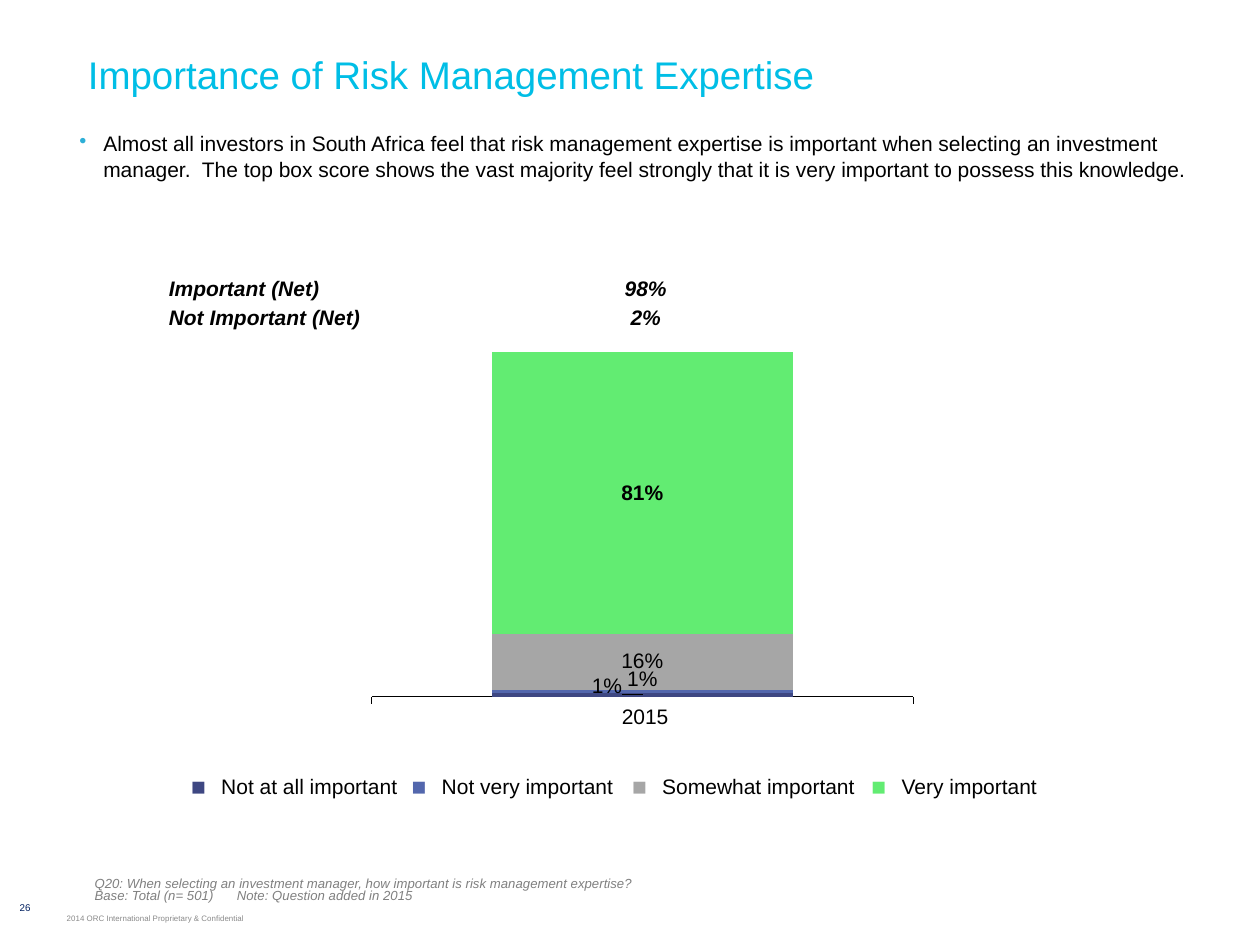
from lxml import etree
from pptx import Presentation
from pptx.chart.data import CategoryChartData
from pptx.dml.color import RGBColor
from pptx.enum.chart import XL_CHART_TYPE, XL_LABEL_POSITION, XL_TICK_LABEL_POSITION, XL_TICK_MARK
from pptx.enum.text import MSO_ANCHOR, PP_ALIGN
from pptx.oxml import parse_xml
from pptx.oxml.ns import qn
from pptx.util import Inches, Pt

STACKED = XL_CHART_TYPE.COLUMN_STACKED_100
LABEL_CENTER = XL_LABEL_POSITION.CENTER
NO_LABELS = XL_TICK_LABEL_POSITION.NONE
TICK_OUT, TICK_NONE = XL_TICK_MARK.OUTSIDE, XL_TICK_MARK.NONE
TOP, MIDDLE, BOTTOM = MSO_ANCHOR.TOP, MSO_ANCHOR.MIDDLE, MSO_ANCHOR.BOTTOM
LEFT, CENTER = PP_ALIGN.LEFT, PP_ALIGN.CENTER

BLACK = RGBColor(0, 0, 0)
CYAN = RGBColor(0x00, 0xBE, 0xE6)
NAVY = RGBColor(0x00, 0x20, 0x60)
GRAY = RGBColor(0x80, 0x80, 0x80)
FOOTER_GRAY = RGBColor(0x89, 0x89, 0x89)
FONT = "Arial"
PLAIN_TABLE = "{2D5ABB26-0587-4C30-8999-92F81FD0307C}"
A_NS = "http://schemas.openxmlformats.org/drawingml/2006/main"
C_NS = "http://schemas.openxmlformats.org/drawingml/2006/chart"

RATINGS = [
    ("Not at all important", 0.01, RGBColor(0x3E, 0x47, 0x82), 1.5),
    ("Not very important", 0.01, RGBColor(0x53, 0x67, 0xAD), 1.5),
    ("Somewhat important", 0.16, RGBColor(0xA6, 0xA6, 0xA6), 1.65),
    ("Very important", 0.81, RGBColor(0x62, 0xEC, 0x72), 1.3),
]
LABEL_SHIFTS = {0: (-0.06, -0.02), 1: (0, -0.03)}
PLOT_AREA = {"x": 0.077, "y": 0.072, "w": 0.92, "h": 0.836}


def style_font(font, size, color, bold=False, italic=False):
    font.name, font.size = FONT, Pt(size)
    font.bold, font.italic = bold, italic
    font.color.rgb = color


def add_run(p, text, *style):
    r = p.add_run()
    r.text = text
    style_font(r.font, *style)


def add_text(s, box, lines, style, anchor=MIDDLE, align=LEFT, insets=(0.1, 0.05, 0.1, 0.05)):
    tf = s.shapes.add_textbox(*map(Inches, box)).text_frame
    tf.word_wrap = True
    tf.vertical_anchor = anchor
    tf.margin_left, tf.margin_top, tf.margin_right, tf.margin_bottom = map(Inches, insets)
    for i, line in enumerate(lines):
        p = tf.paragraphs[0] if i == 0 else tf.add_paragraph()
        p.alignment = align
        add_run(p, line, *style)
    return tf


def add_bullet(p, char, color, indent):
    pPr = p._p.get_or_add_pPr()
    pPr.set("marL", str(Inches(indent)))
    pPr.set("indent", str(-Inches(indent)))
    pPr.append(parse_xml(f'<a:buClr xmlns:a="{A_NS}"><a:srgbClr val="{color}"/></a:buClr>'))
    pPr.append(parse_xml(f'<a:buChar xmlns:a="{A_NS}" char="{char}"/>'))


def add_tab(p, inches):
    tabs = etree.SubElement(p._p.get_or_add_pPr(), qn("a:tabLst"))
    etree.SubElement(tabs, qn("a:tab"), pos=str(Inches(inches)), algn="l")


def add_table(s, left, top, widths, row_height, rows):
    frame = s.shapes.add_table(len(rows), len(widths), Inches(left), Inches(top),
                               Inches(sum(widths)), Inches(row_height * len(rows)))
    table = frame.table
    table.first_row = table.horz_banding = False
    table._tbl.tblPr.find(qn("a:tableStyleId")).text = PLAIN_TABLE
    for column, width in zip(table.columns, widths):
        column.width = Inches(width)
    for i, row in enumerate(rows):
        table.rows[i].height = Inches(row_height)
        for j, (text, align, style) in enumerate(row):
            cell = table.cell(i, j)
            cell.fill.background()
            cell.vertical_anchor = MIDDLE
            cell.margin_left = cell.margin_right = Inches(0.01)
            cell.margin_top = cell.margin_bottom = Inches(0.01)
            p = cell.text_frame.paragraphs[0]
            p.alignment = align
            add_run(p, text, *style)


def manual_layout(values, inner=False):
    parts = '<c:layoutTarget val="inner"/>' if inner else ""
    if inner:
        parts += '<c:xMode val="edge"/><c:yMode val="edge"/>'
    parts += "".join(f'<c:{key} val="{value}"/>' for key, value in values.items())
    return parse_xml(f'<c:layout xmlns:c="{C_NS}"><c:manualLayout>{parts}</c:manualLayout></c:layout>')


def format_series(series, index, color):
    series.format.fill.solid()
    series.format.fill.fore_color.rgb = color
    labels = series.data_labels
    labels.show_value = True
    labels.number_format, labels.number_format_is_linked = "0%", False
    style_font(labels.font, 12, BLACK, index == len(RATINGS) - 1)
    if index in LABEL_SHIFTS:
        label = series.points[0].data_label
        style_font(label.font, 12, BLACK)
        label.position = LABEL_CENTER
        x, y = LABEL_SHIFTS[index]
        idx = series._element.find(".//" + qn("c:dLbl")).find(qn("c:idx"))
        idx.addnext(manual_layout({"x": x, "y": y}))


def add_rating_chart(s, box):
    data = CategoryChartData(number_format="0%")
    data.categories = ["1"]
    for i, (_, value, _, _) in enumerate(RATINGS, 1):
        data.add_series(f"Series {i}", [value])
    chart = s.shapes.add_chart(STACKED, *map(Inches, box), data).chart
    chart.has_legend = chart.has_title = False
    style_font(chart.font, 12, BLACK)
    axis = chart.category_axis
    axis.tick_label_position = NO_LABELS
    axis.major_tick_mark, axis.minor_tick_mark = TICK_OUT, TICK_NONE
    axis.format.line.color.rgb = BLACK
    axis.format.line.width = Pt(0.25)
    values = chart.value_axis
    values.minimum_scale, values.maximum_scale, values.major_unit = 0, 1, 0.25
    values.has_major_gridlines = values.visible = False
    plot = chart.plots[0]
    plot.gap_width, plot.overlap, plot.vary_by_categories = 80, 100, False
    for i, (series, rating) in enumerate(zip(plot.series, RATINGS)):
        format_series(series, i, rating[2])
    area = chart._chartSpace.find(".//" + qn("c:plotArea"))
    for old in area.findall(qn("c:layout")):
        area.remove(old)
    area.insert(0, manual_layout(PLOT_AREA, inner=True))


def add_tables(s):
    body, net = (12, BLACK), (12, BLACK, True, True)
    legend, widths = [], []
    for name, _, color, width in RATINGS:
        legend += [("■", CENTER, (14, color)), (f" {name}", LEFT, body)]
        widths += [0.25, width]
    add_table(s, 1.45, 6.12, widths, 0.25, [legend])
    nets = [("Important (Net)", "98%"), ("Not Important (Net)", "2%")]
    add_table(s, 1.33, 2.18, [2.57, 2.45], 0.23,
              [[(name, LEFT, net), (value, CENTER, net)] for name, value in nets])
    add_table(s, 3.12, 5.54, [4], 0.3, [[("2015", CENTER, body)]])


def main():
    prs = Presentation()
    prs.slide_width, prs.slide_height = Inches(10), Inches(7.5)
    s = prs.slides.add_slide(prs.slide_layouts[6])
    footer_insets = (0, 0.03, 0, 0.03)
    add_text(s, (0, 7, 0.4, 0.4), ["26"], (5.6, NAVY), align=CENTER, insets=footer_insets)
    add_text(s, (0.53, 7.19, 2.57, 0.2), ["2014 ORC International Proprietary & Confidential"],
             (4.5, FOOTER_GRAY), insets=footer_insets)
    add_text(s, (0.6, 0.25, 9, 0.67), ["Importance of Risk Management Expertise"], (22, CYAN))
    note = add_text(s, (0.74, 6.79, 7.79, 0.43), [
        "Q20: When selecting an investment manager, how important is risk management expertise?",
        "Base: Total (n= 501) \tNote: Question added in 2015",
    ], (7.5, GRAY, False, True), BOTTOM, insets=(0.01, 0.05, 0.05, 0.05))
    for p in note.paragraphs:
        add_tab(p, 1.13)
        p.line_spacing = 0.8
    add_rating_chart(s, (2.59, 2.56, 4.67, 3.27))
    add_tables(s)
    finding = add_text(s, (0.58, 0.99, 9, 0.5), [
        "Almost all investors in South Africa feel that risk management expertise is important "
        "when selecting an investment manager.  The top box score shows the vast majority feel "
        "strongly that it is very important to possess this knowledge.",
    ], (12, BLACK), TOP, insets=(0.05,) * 4)
    p = finding.paragraphs[0]
    add_bullet(p, "•", "2DAFD7", 0.19)
    p.space_after = Pt(2)
    prs.save("out.pptx")


if __name__ == "__main__":
    main()
